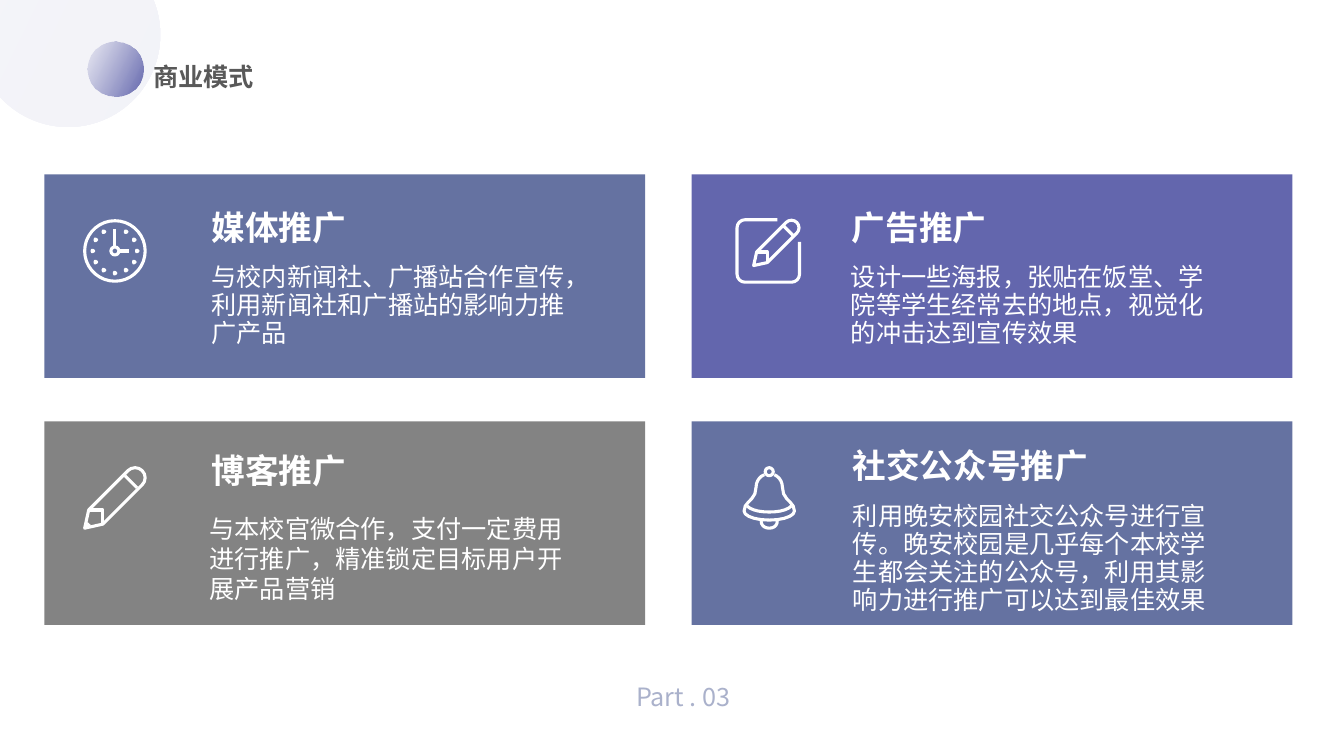
from dataclasses import dataclass
from math import cos, radians, sin
from typing import Callable

from lxml import etree
from pptx import Presentation
from pptx.dml.color import RGBColor
from pptx.enum.shapes import MSO_SHAPE
from pptx.enum.text import MSO_ANCHOR, PP_ALIGN
from pptx.oxml.ns import qn
from pptx.util import Inches, Pt

FONT = "Noto Sans CJK SC"
WHITE, SLATE, VIOLET, GREY = "FFFFFF", "6572A1", "6366AD", "838383"
CARD_WIDTH, CARD_HEIGHT = 5.96, 2.02
COLUMN_STEP, ROW_STEP = 6.42, 2.45


def rgb(hex_colour):
    return RGBColor.from_string(hex_colour)


def set_alpha(colour_owner, percent):
    """Make the colour inside an XML element partly transparent."""
    colour = next(colour_owner.iter(qn("a:srgbClr")))
    etree.SubElement(colour, qn("a:alpha")).set("val", str(percent * 1000))


def style_text(shape, text, size, colour, bold=False, align=PP_ALIGN.LEFT, spacing=None):
    frame = shape.text_frame
    frame.word_wrap = True
    frame.text = text
    paragraph = frame.paragraphs[0]
    paragraph.alignment = align
    if spacing:
        paragraph.line_spacing = Pt(spacing)
    run = paragraph.runs[0]
    run.font.name, run.font.size, run.font.bold = FONT, Pt(size), bold
    run.font.color.rgb = rgb(colour)
    properties = run._r.get_or_add_rPr()
    etree.SubElement(properties, qn("a:ea")).set("typeface", FONT)
    return run


def add_text(slide, left, top, width, height, text, size, colour, **options):
    box = slide.shapes.add_textbox(Inches(left), Inches(top), Inches(width), Inches(height))
    return box, style_text(box, text, size, colour, **options)


def add_plain(slide, kind, left, top, width, height):
    shape = slide.shapes.add_shape(kind, Inches(left), Inches(top), Inches(width), Inches(height))
    shape.shadow.inherit = False
    shape.line.fill.background()
    return shape


def add_gradient_disc(slide, left, top, size, end_alpha):
    disc = add_plain(slide, MSO_SHAPE.OVAL, left, top, size, size)
    disc.fill.gradient()
    disc.fill.gradient_angle = 334
    stops = disc.fill.gradient_stops
    for stop, colour, position, alpha in zip(stops, ("7578B7", VIOLET), (0, 1), (8, end_alpha)):
        stop.color.rgb = rgb(colour)
        stop.position = position
        set_alpha(stop._gs, alpha)


def arc(x, y, radius, start, end, steps=4):
    angles = [radians(start + (end - start) * i / steps) for i in range(steps + 1)]
    return [(x + radius * cos(a), y + radius * sin(a)) for a in angles]


def circle(x, y, radius, steps=12):
    return arc(x, y, radius, 0, 360, steps)


def bezier(*controls, steps=5):
    points = []
    for i in range(steps + 1):
        t = i / steps
        weights = ((1 - t) ** 3, 3 * t * (1 - t) ** 2, 3 * t * t * (1 - t), t ** 3)
        points.append(tuple(sum(w * c[axis] for w, c in zip(weights, controls)) for axis in (0, 1)))
    return points


def mirrored(points, axis):
    """Continue a left half with its reflection about a vertical axis."""
    return points + [(2 * axis - x, y) for x, y in reversed(points[:-1])]


# Each icon is a list of strokes, in inches from the icon's top left corner.

def clock():
    middle = 0.32
    dots = [circle(x, y, 0.01, steps=3) for x, y in arc(middle, middle, 0.22, -60, 240, steps=10)]
    return [circle(middle, middle, 0.3, steps=36), circle(middle, middle, 0.04),
            [(middle, 0.1), (middle, 0.28)], [(0.36, middle), (0.46, middle)], *dots]


def pencil():
    barrel = [(0.02, 0.62), (0.06, 0.44), *arc(0.52, 0.12, 0.1, -135, 45, steps=8),
              (0.2, 0.58), (0.02, 0.62)]
    return [barrel, [(0.07, 0.44), (0.2, 0.44), (0.2, 0.57)], [(0.42, 0.1), (0.54, 0.22)],
            [(0.04, 0.57), (0.07, 0.6)]]


def notepad():
    near, far, radius = 0.09, 0.55, 0.08
    page = [(0.41, 0.01), *arc(near, near, radius, 270, 180), *arc(near, far, radius, 180, 90),
            *arc(far, far, radius, 90, 0), (0.63, 0.23)]
    small_pencil = [[(0.16 + 0.75 * x, 0.75 * y) for x, y in part] for part in pencil()[:3]]
    return [page, *small_pencil]


def bell():
    axis = 0.26
    side = (bezier((0.21, 0.09), (0.16, 0.11), (0.13, 0.16), (0.13, 0.21))
            + bezier((0.13, 0.21), (0.13, 0.35), (0.01, 0.35), (0.01, 0.45))[1:]
            + bezier((0.01, 0.45), (0.01, 0.5), (0.12, 0.54), (axis, 0.54))[1:])
    rim = bezier((0.04, 0.4), (0.08, 0.44), (0.16, 0.46), (axis, 0.46))
    clapper = bezier((0.18, 0.55), (0.18, 0.59), (0.21, 0.62), (axis, 0.62))
    return [circle(axis, 0.06, 0.04), *(mirrored(half, axis) for half in (side, rim, clapper))]


def add_icon(slide, left, top, strokes):
    placed = [[(Inches(left + x), Inches(top + y)) for x, y in part] for part in strokes]
    builder = slide.shapes.build_freeform(*placed[0][0])
    for index, (start, *rest) in enumerate(placed):
        if index:
            builder.move_to(*start)
        builder.add_line_segments(rest, close=start == rest[-1])
    icon = builder.convert_to_shape()
    icon.shadow.inherit = False
    icon.fill.background()
    icon.line.color.rgb = rgb(WHITE)
    icon.line.width = Pt(2.2)


@dataclass
class Promotion:
    heading: str
    body: str
    fill: str
    icon: Callable
    icon_x: float
    heading_at: tuple
    body_at: tuple
    heading_width: float = 1.95
    body_height: float = 0.94
    spacing: float = 20


PROMOTIONS = [
    Promotion("媒体推广", "与校内新闻社、广播站合作宣传，利用新闻社和广播站的影响力推广产品",
              SLATE, clock, 0.38, (1.56, 0.27), (1.56, 0.84)),
    Promotion("广告推广", "设计一些海报，张贴在饭堂、学院等学生经常去的地点，视觉化的冲击达到宣传效果",
              VIOLET, notepad, 0.44, (1.49, 0.27), (1.48, 0.84)),
    Promotion("博客推广", "与本校官微合作，支付一定费用进行推广，精准锁定目标用户开展产品营销",
              GREY, pencil, 0.38, (1.56, 0.23), (1.54, 0.86), body_height=1.01, spacing=21.5),
    Promotion("社交公众号推广", "利用晚安校园社交公众号进行宣传。晚安校园是几乎每个本校学生都会关注的公众号，利用其影响力进行推广可以达到最佳效果",
              SLATE, bell, 0.51, (1.5, 0.18), (1.5, 0.76), heading_width=2.96, body_height=1.22),
]


def add_card(slide, left, top, promotion):
    panel = add_plain(slide, MSO_SHAPE.RECTANGLE, left, top, CARD_WIDTH, CARD_HEIGHT)
    panel.fill.solid()
    panel.fill.fore_color.rgb = rgb(promotion.fill)
    add_icon(slide, left + promotion.icon_x, top + 0.44, promotion.icon())
    x, y = promotion.body_at
    add_text(slide, left + x, top + y, 3.82, promotion.body_height, promotion.body, 18, WHITE,
             spacing=promotion.spacing)
    x, y = promotion.heading_at
    add_text(slide, left + x, top + y, promotion.heading_width, 0.5, promotion.heading, 24, WHITE,
             bold=True, align=PP_ALIGN.JUSTIFY, spacing=29)


def add_header(slide, left, top):
    add_gradient_disc(slide, left - 1.11, top - 0.98, 1.83, 8)
    add_gradient_disc(slide, left, top, 0.55, 100)
    title = slide.shapes.title
    title.left, title.top = Inches(left + 0.55), Inches(top + 0.15)
    title.width, title.height = Inches(2.75), Inches(0.4)
    style_text(title, "商业模式", 18, "595959", bold=True, align=PP_ALIGN.JUSTIFY, spacing=21.5)
    title.text_frame.vertical_anchor = MSO_ANCHOR.TOP
    slide.shapes._spTree.append(title._element)


def add_footer(slide, left, top):
    box, part = add_text(slide, left, top, 1.48, 0.51, "Part . 03", 18, SLATE, align=PP_ALIGN.JUSTIFY)
    box.text_frame.vertical_anchor = MSO_ANCHOR.MIDDLE
    set_alpha(part._r, 54)


def main():
    deck = Presentation()
    deck.slide_width, deck.slide_height = Inches(13.33), Inches(7.5)
    slide = deck.slides.add_slide(deck.slide_layouts[5])
    add_header(slide, 0.87, 0.41)
    for index, promotion in enumerate(PROMOTIONS):
        row, column = divmod(index, 2)
        add_card(slide, 0.44 + column * COLUMN_STEP, 1.73 + row * ROW_STEP, promotion)
    add_footer(slide, 6.21, 6.65)
    deck.save("out.pptx")


if __name__ == "__main__":
    main()
